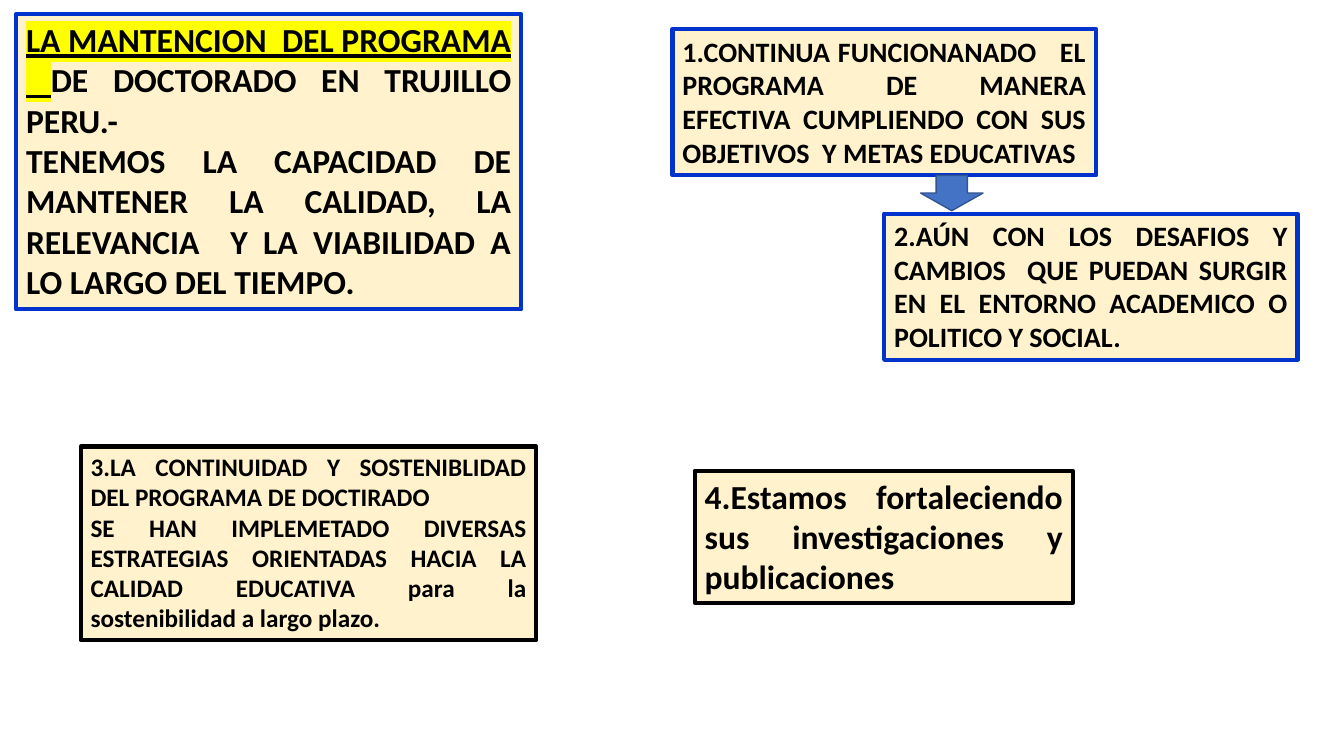
from lxml.etree import SubElement
from pptx import Presentation
from pptx.dml.color import RGBColor
from pptx.enum.shapes import MSO_SHAPE
from pptx.enum.text import MSO_AUTO_SIZE, PP_ALIGN
from pptx.oxml.ns import qn
from pptx.util import Inches, Pt

CREAM = RGBColor(0xFF, 0xF2, 0xCC)
BLUE = RGBColor(0x00, 0x33, 0xCC)
BLACK = RGBColor(0x00, 0x00, 0x00)
YELLOW = RGBColor(0xFF, 0xFF, 0x00)
ARROW_FILL = RGBColor(0x44, 0x72, 0xC4)
ARROW_LINE = RGBColor(0x32, 0x54, 0x91)

PROGRAM_TITLE = "LA MANTENCION  DEL PROGRAMA  "
PROGRAM_PLACE = "DE DOCTORADO EN TRUJILLO PERU.- "
PROGRAM_CAPACITY = (
    "TENEMOS LA CAPACIDAD DE MANTENER LA CALIDAD, LA RELEVANCIA  Y LA "
    "VIABILIDAD A LO LARGO DEL TIEMPO."
)
OPERATION = (
    "1.CONTINUA FUNCIONANADO   EL PROGRAMA DE MANERA EFECTIVA CUMPLIENDO "
    "CON SUS OBJETIVOS  Y METAS EDUCATIVAS"
)
CHALLENGES = (
    "2.AÚN CON LOS DESAFIOS Y CAMBIOS  QUE PUEDAN SURGIR EN EL ENTORNO "
    "ACADEMICO O POLITICO Y SOCIAL."
)
CONTINUITY = "3.LA CONTINUIDAD Y SOSTENIBLIDAD DEL PROGRAMA DE DOCTIRADO"
STRATEGIES = (
    "SE HAN IMPLEMETADO DIVERSAS ESTRATEGIAS ORIENTADAS HACIA LA CALIDAD "
    "EDUCATIVA para la sostenibilidad a largo plazo."
)
RESEARCH = "4.Estamos fortaleciendo sus investigaciones y publicaciones "


def add_span(para, text, size, highlight=None):
    span = para.add_run()
    span.text = text
    font = span.font
    font.size = Pt(size)
    font.bold = True
    font.color.rgb = BLACK
    font.name = "Calibri"
    if highlight is not None:
        font.underline = True
        properties = span._r.get_or_add_rPr()
        marker = SubElement(properties, qn("a:highlight"))
        SubElement(marker, qn("a:srgbClr"), val=str(highlight))
        properties.find(qn("a:latin")).addprevious(marker)


def add_panel(page, left, top, width, height, paragraphs, size, border):
    box = page.shapes.add_textbox(
        Inches(left), Inches(top), Inches(width), Inches(height)
    )
    box.fill.solid()
    box.fill.fore_color.rgb = CREAM
    box.line.color.rgb = border
    box.line.width = Pt(3)
    frame = box.text_frame
    frame.word_wrap = True
    frame.auto_size = MSO_AUTO_SIZE.SHAPE_TO_FIT_TEXT
    for index, spans in enumerate(paragraphs):
        para = frame.add_paragraph() if index else frame.paragraphs[0]
        para.alignment = PP_ALIGN.JUSTIFY
        for text, highlight in spans:
            add_span(para, text, size, highlight=highlight)


def add_down_arrow(page, left, top, width, height):
    arrow = page.shapes.add_shape(
        MSO_SHAPE.DOWN_ARROW,
        Inches(left), Inches(top), Inches(width), Inches(height),
    )
    arrow.shadow.inherit = False
    arrow.fill.solid()
    arrow.fill.fore_color.rgb = ARROW_FILL
    arrow.line.color.rgb = ARROW_LINE
    arrow.line.width = Pt(1)


def build_program_slide(page):
    program = [
        [(PROGRAM_TITLE, YELLOW), (PROGRAM_PLACE, None)],
        [(PROGRAM_CAPACITY, None)],
    ]
    continuity = [[(CONTINUITY, None)], [(STRATEGIES, None)]]
    panels = [
        (0.16, 0.14, 5.01, 2.93, program, 24, BLUE),
        (6.67, 0.29, 4.2, 1.45, [[(OPERATION, None)]], 20, BLUE),
        (8.77, 2.12, 4.1, 1.45, [[(CHALLENGES, None)]], 20, BLUE),
        (0.8, 4.43, 4.52, 1.92, continuity, 18, BLACK),
        (6.89, 4.67, 3.75, 1.31, [[(RESEARCH, None)]], 24, BLACK),
    ]
    for panel in panels:
        add_panel(page, *panel)
    add_down_arrow(page, 9.13, 1.74, 0.62, 0.35)


def main():
    deck = Presentation()
    deck.slide_width = Inches(13.33)
    deck.slide_height = Inches(7.5)
    build_program_slide(deck.slides.add_slide(deck.slide_layouts[6]))
    deck.save("out.pptx")


if __name__ == "__main__":
    main()
